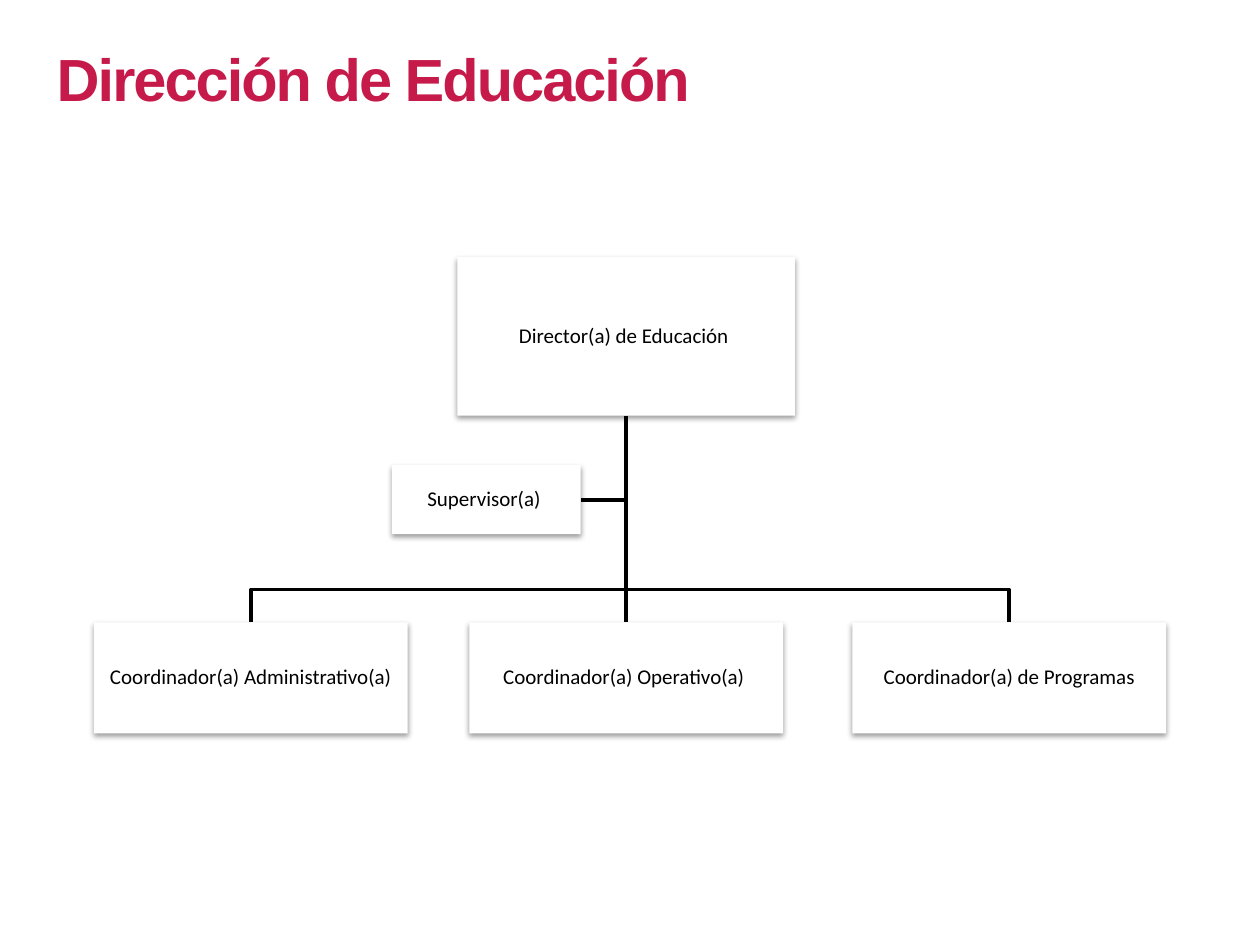
from pptx import Presentation
from pptx.dml.color import RGBColor as RGB
from pptx.enum.shapes import MSO_CONNECTOR as LINK, MSO_SHAPE as SHAPE
from pptx.enum.text import MSO_ANCHOR as ANCHOR, PP_ALIGN as ALIGN
from pptx.oxml import parse_xml
from pptx.oxml.ns import nsdecls
from pptx.util import Inches, Pt

COLORS = {"title": "C51A4A", "box": "FFFFFF", "ink": "000000"}
SHADOW = (
    f'<a:effectLst {nsdecls("a")}>'
    '<a:outerShdw blurRad="40000" dist="20000" dir="5400000" rotWithShape="0">'
    f'<a:srgbClr val="{COLORS["ink"]}"><a:alpha val="38000"/></a:srgbClr>'
    "</a:outerShdw></a:effectLst>"
)


def put(frame, text, font="Calibri", size=12, color="ink", bold=False,
        align=ALIGN.CENTER, anchor=ANCHOR.MIDDLE, inset=None, lead=None, track=None):
    """Write one formatted paragraph into a text frame."""
    frame.word_wrap = True
    frame.vertical_anchor = anchor
    if inset is not None:
        frame.margin_left = frame.margin_right = Inches(inset)
        frame.margin_top = frame.margin_bottom = Inches(inset)
    para = frame.paragraphs[0]
    para.alignment = align
    para.line_spacing = lead
    run = para.add_run()
    run.text = text
    run.font.name, run.font.size, run.font.bold = font, Pt(size), bold
    run.font.color.rgb = RGB.from_string(COLORS[color])
    if track is not None:
        run._r.get_or_add_rPr().set("spc", str(round(track * 100)))


class Chart:
    """Organisation chart: line style and current slide."""

    def __init__(self, slide, weight=2):
        self.slide = slide
        self.weight = weight

    def title(self, text, left, top, width, height):
        head = self.slide.shapes.title
        head.left, head.top = Inches(left), Inches(top)
        head.width, head.height = Inches(width), Inches(height)
        put(head.text_frame, text, font="Arial", size=34, color="title", bold=True,
            align=ALIGN.LEFT, anchor=ANCHOR.TOP, lead=1.0, track=-1.1)

    def box(self, text, mid, top, width, height):
        """Add a shadowed box centred on mid."""
        box = self.slide.shapes.add_shape(
            SHAPE.RECTANGLE, Inches(mid - width / 2), Inches(top),
            Inches(width), Inches(height))
        box.shadow.inherit = False
        box.fill.solid()
        box.fill.fore_color.rgb = RGB.from_string(COLORS["box"])
        box.line.fill.background()
        props = box._element.spPr
        props.remove(props[-1])
        props.append(parse_xml(SHADOW))
        put(box.text_frame, text, inset=0.01, lead=0.9)
        return box

    def ink(self, line):
        line.color.rgb = RGB.from_string(COLORS["ink"])
        line.width = Pt(self.weight)

    def trunk(self, upper, lower):
        """Join the bottom of one box to the top of another."""
        line = self.slide.shapes.add_connector(LINK.STRAIGHT, 0, 0, 0, 0)
        line.begin_connect(upper, 2)
        line.end_connect(lower, 0)
        self.ink(line.line)
        line._element.spPr.append(parse_xml(f'<a:effectLst {nsdecls("a")}/>'))

    def branch(self, *points):
        """Draw an open angled line through the points."""
        spots = [(Inches(x), Inches(y)) for x, y in points]
        pen = self.slide.shapes.build_freeform(*spots[0])
        pen.add_line_segments(spots[1:], close=False)
        line = pen.convert_to_shape()
        line.shadow.inherit = False
        line.fill.background()
        self.ink(line.line)


def main():
    deck = Presentation()
    deck.slide_width, deck.slide_height = Inches(10), Inches(7.5)
    chart = Chart(deck.slides.add_slide(deck.slide_layouts[5]))
    chart.title("Dirección de Educación", 0.35, 0.28, 5.72, 0.69)

    # Levels of the chart
    axis, base, bar, row = 4.97, 3.3, 4.68, 4.94
    aide = 3.97

    # Side branches
    sides = [("Coordinador(a) Administrativo(a)", 1.99),
             ("Coordinador(a) de Programas", 8.01)]
    chart.branch((axis, base), (axis, aide), (4.61, aide))
    for _, mid in sides:
        chart.branch((axis, base), (axis, bar), (mid, bar), (mid, row))

    # Boxes
    boss = chart.box("Director(a) de Educación ", axis, 2.04, 2.68, base - 2.04)
    chart.box("Supervisor(a) ", 3.86, 3.69, 1.5, 0.55)
    for text, mid in sides:
        chart.box(text, mid, row, 2.49, 0.88)
    core = chart.box("Coordinador(a) Operativo(a) ", axis, row, 2.49, 0.88)

    # Central line
    chart.trunk(boss, core)
    deck.save("out.pptx")


if __name__ == "__main__":
    main()
